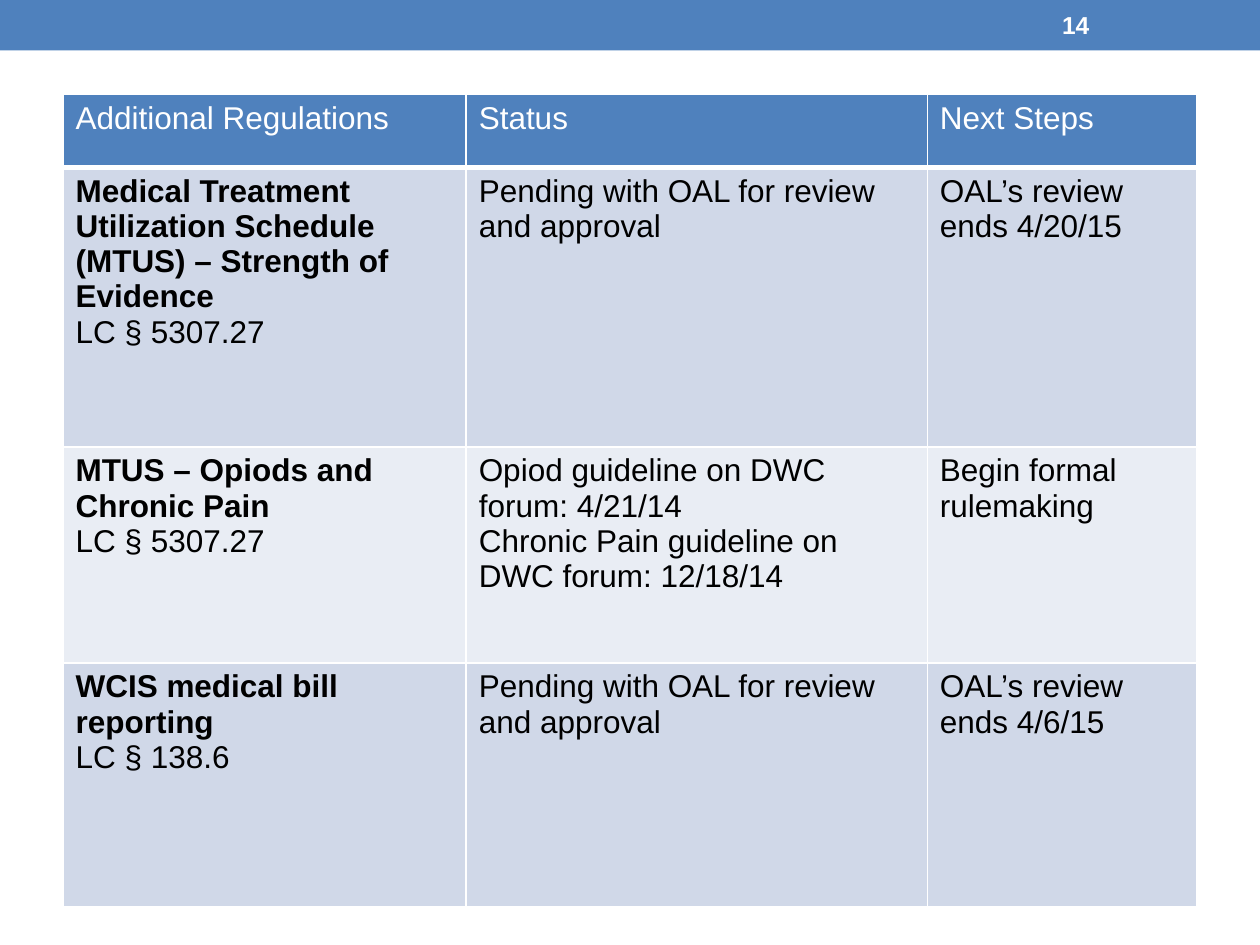
import dataclasses

import pptx
import pptx.dml.color
import pptx.enum.shapes
import pptx.enum.text
import pptx.oxml.ns
import pptx.util
from lxml import etree

Pt = pptx.util.Pt


@dataclasses.dataclass(frozen=True)
class Theme:
    font: str = "Arial"
    blue: str = "4F81BD"
    bands: tuple = ("D0D8E8", "E9EDF4")
    white: str = "FFFFFF"
    black: str = "000000"
    table_size: int = 18
    number_size: int = 14
    rule: int = 1
    header_rule: int = 3


THEME = Theme()

COLUMN_WIDTHS = (230.4, 263.5, 154.1)
ROW_HEIGHTS = (41.6, 159.9, 123.4, 139.1)

HEADINGS = ("Additional Regulations", "Status", "Next Steps")
# Each regulation: title, labour code section, status lines, next step
REGULATIONS = (
    ("Medical Treatment Utilization Schedule (MTUS) – Strength of Evidence",
     "LC § 5307.27",
     ("Pending with OAL for review and approval",),
     "OAL’s review ends 4/20/15"),
    ("MTUS – Opiods and Chronic Pain",
     "LC § 5307.27",
     ("Opiod guideline on DWC forum: 4/21/14",
      "Chronic Pain guideline on DWC forum: 12/18/14"),
     "Begin formal rulemaking"),
    ("WCIS medical bill reporting",
     "LC § 138.6",
     ("Pending with OAL for review and approval",),
     "OAL’s review ends 4/6/15"),
)


def rgb(value):
    return pptx.dml.color.RGBColor.from_string(value)


def write(frame, lines, size, color):
    """Write (text, bold) pairs, one paragraph each."""
    for index, (text, bold) in enumerate(lines):
        para = frame.paragraphs[0] if index == 0 else frame.add_paragraph()
        span = para.add_run()
        span.text = text
        span.font.name = THEME.font
        span.font.size = Pt(size)
        span.font.bold = bold
        span.font.color.rgb = rgb(color)


def add_border(cell, side, width):
    qn = pptx.oxml.ns.qn
    line = etree.SubElement(cell._tc.get_or_add_tcPr(), qn(f"a:ln{side}"), w=str(Pt(width)))
    fill = etree.SubElement(line, qn("a:solidFill"))
    etree.SubElement(fill, qn("a:srgbClr"), val=THEME.white)


def fill_cell(cell, lines, fill, color, bottom_rule):
    for side in "LRTB":
        add_border(cell, side, bottom_rule if side == "B" else THEME.rule)
    cell.fill.solid()
    cell.fill.fore_color.rgb = rgb(fill)
    write(cell.text_frame, lines, THEME.table_size, color)


def add_banner(page, width):
    banner = page.shapes.add_shape(
        pptx.enum.shapes.MSO_SHAPE.RECTANGLE, 0, 0, width, Pt(28.8))
    banner.shadow.inherit = False
    banner.fill.solid()
    banner.fill.fore_color.rgb = rgb(THEME.blue)
    banner.line.fill.background()


def add_page_number(page, number):
    box = page.shapes.add_textbox(Pt(599.8), Pt(1.4), Pt(84.2), Pt(25.9))
    box.text_frame.word_wrap = True
    box.text_frame.vertical_anchor = pptx.enum.text.MSO_ANCHOR.MIDDLE
    write(box.text_frame, [(number, True)], THEME.number_size, THEME.white)


def add_regulation_table(page):
    table = page.shapes.add_table(
        len(ROW_HEIGHTS), len(COLUMN_WIDTHS), Pt(36), Pt(54),
        Pt(sum(COLUMN_WIDTHS)), Pt(sum(ROW_HEIGHTS))).table
    for column, width in zip(table.columns, COLUMN_WIDTHS):
        column.width = Pt(width)
    for row, height in zip(table.rows, ROW_HEIGHTS):
        row.height = Pt(height)

    # Header row
    for cell, heading in zip(table.rows[0].cells, HEADINGS):
        fill_cell(cell, [(heading, False)], THEME.blue, THEME.white, THEME.header_rule)

    # Body rows in alternating bands
    for index, (title, section, status, step) in enumerate(REGULATIONS):
        contents = ([(title, True), (section, False)],
                    [(line, False) for line in status],
                    [(step, False)])
        band = THEME.bands[index % len(THEME.bands)]
        for cell, lines in zip(table.rows[index + 1].cells, contents):
            fill_cell(cell, lines, band, THEME.black, THEME.rule)


def main():
    deck = pptx.Presentation()
    deck.slide_width, deck.slide_height = Pt(720), Pt(540)
    page = deck.slides.add_slide(deck.slide_layouts[6])
    add_banner(page, deck.slide_width)
    add_regulation_table(page)
    add_page_number(page, "14")
    deck.save("out.pptx")


if __name__ == "__main__":
    main()
